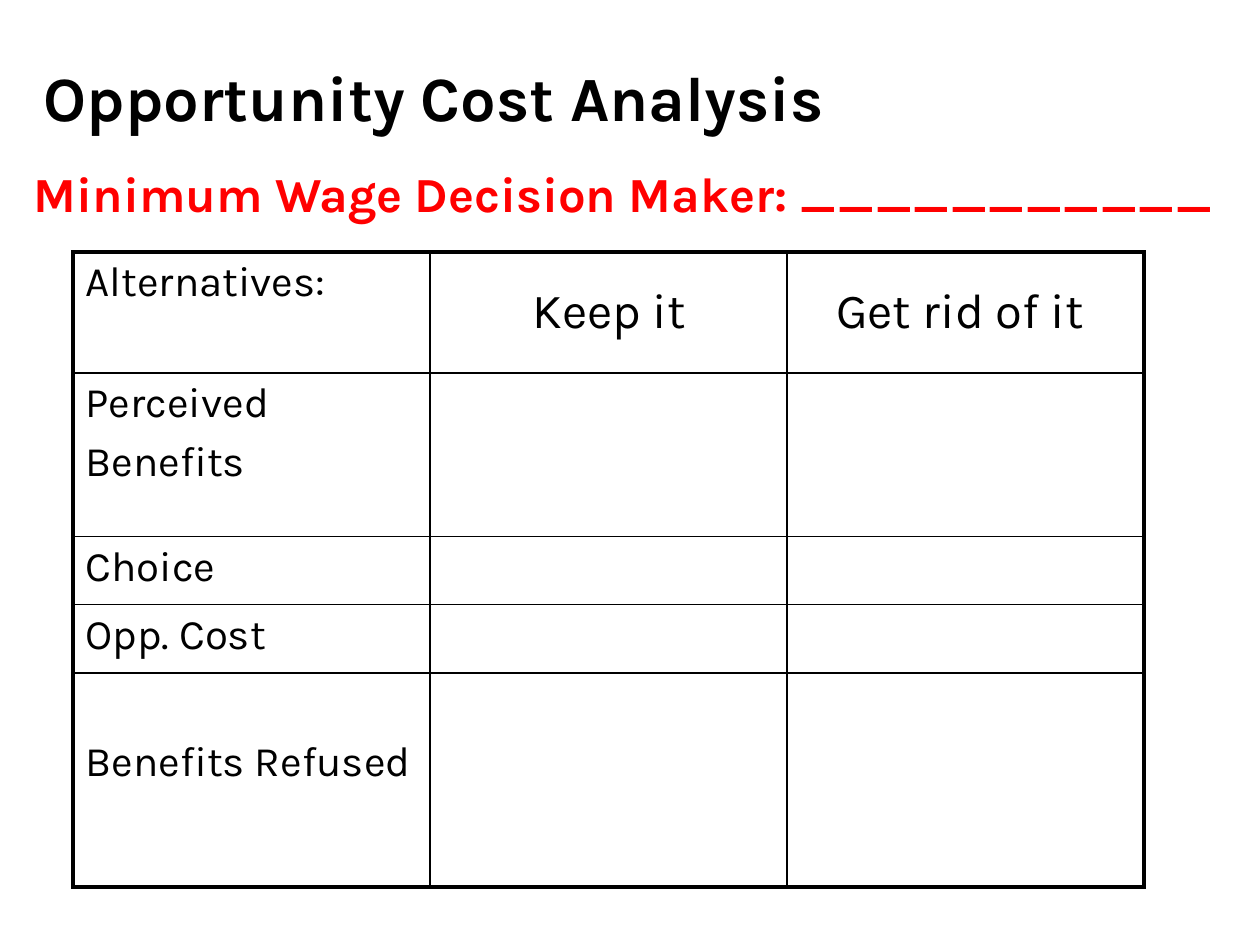
import pptx
import pptx.util
import pptx.dml.color
import pptx.enum.text
import pptx.oxml
import pptx.oxml.ns
from dataclasses import dataclass

Inches = pptx.util.Inches
Pt = pptx.util.Pt
RGB = pptx.dml.color.RGBColor
Align = pptx.enum.text.PP_ALIGN
Anchor = pptx.enum.text.MSO_ANCHOR


@dataclass(frozen=True)
class Theme:
    font: str = "Karla"
    ink: str = "000000"
    accent: str = "FF0000"
    title: float = 36
    heading: float = 28
    label: float = 24
    label_gap: float = 5.8
    outer_line: float = 2.25
    inner_line: float = 1


THEME = Theme()
ROWS = [
    (0.96, ["Alternatives:"]),
    (1.3, ["Perceived", "Benefits"]),
    (0.54, ["Choice"]),
    (0.54, ["Opp. Cost"]),
    (1.7, ["Benefits Refused"]),
]
COLUMNS = 3


def style_paragraph(p, size, color=THEME.ink, bold=False):
    p.font.name = THEME.font
    p.font.size = Pt(size)
    p.font.bold = bold
    p.font.color.rgb = RGB.from_string(color)


def add_text(slide, box, text, size, color=THEME.ink, bold=False,
             align=Align.LEFT, anchor=Anchor.TOP):
    tf = slide.shapes.add_textbox(*map(Inches, box)).text_frame
    tf.word_wrap = True
    tf.vertical_anchor = anchor
    p = tf.paragraphs[0]
    p.text = text
    p.alignment = align
    style_paragraph(p, size, color, bold)


def set_borders(cell, outer_sides):
    """Draw the four cell borders, heavier on the table's outer sides."""
    props = cell._tc.get_or_add_tcPr()
    for i, side in enumerate("LRTB"):
        width = THEME.outer_line if side in outer_sides else THEME.inner_line
        props.insert(i, pptx.oxml.parse_xml(
            f'<a:ln{side} {pptx.oxml.ns.nsdecls("a")} w="{Pt(width)}">'
            f'<a:solidFill><a:srgbClr val="{THEME.ink}"/></a:solidFill>'
            f'</a:ln{side}>'))


def fill_label(cell, lines):
    tf = cell.text_frame
    tf.text = "\n".join(lines)
    for p in tf.paragraphs:
        p.space_before = Pt(THEME.label_gap)
        style_paragraph(p, THEME.label)


def add_analysis_table(slide):
    frame = slide.shapes.add_table(len(ROWS), COLUMNS, Inches(0.58), Inches(2),
                                   Inches(8.5), Inches(5.04))
    table = frame.table
    table.first_row = table.horz_banding = False
    for r, (height, lines) in enumerate(ROWS):
        table.rows[r].height = Inches(height)
        for c in range(COLUMNS):
            cell = table.cell(r, c)
            cell.fill.background()
            edges = {"L": c == 0, "R": c == COLUMNS - 1,
                     "T": r == 0, "B": r == len(ROWS) - 1}
            set_borders(cell, [side for side, outer in edges.items() if outer])
        fill_label(table.cell(r, 0), lines)
    table.cell(len(ROWS) - 1, 0).margin_top = Inches(0.52)


def main():
    prs = pptx.Presentation()
    prs.slide_width, prs.slide_height = Inches(10), Inches(7.5)
    slide = prs.slides.add_slide(prs.slide_layouts[6])
    add_text(slide, (0.25, 0.33, 9.33, 0.78), "Opportunity Cost Analysis",
             THEME.title, bold=True, anchor=Anchor.BOTTOM)
    add_analysis_table(slide)
    add_text(slide, (0.17, 1.25, 9.83, 0.57),
             "Minimum Wage Decision Maker: ___________",
             THEME.heading, THEME.accent, bold=True)
    for left, width, choice in [(3.67, 2.33, "Keep it"),
                                (6.33, 2.58, "Get rid of it")]:
        add_text(slide, (left, 2.17, width, 0.88), choice, THEME.heading,
                 align=Align.CENTER)
    prs.save("out.pptx")


if __name__ == "__main__":
    main()
